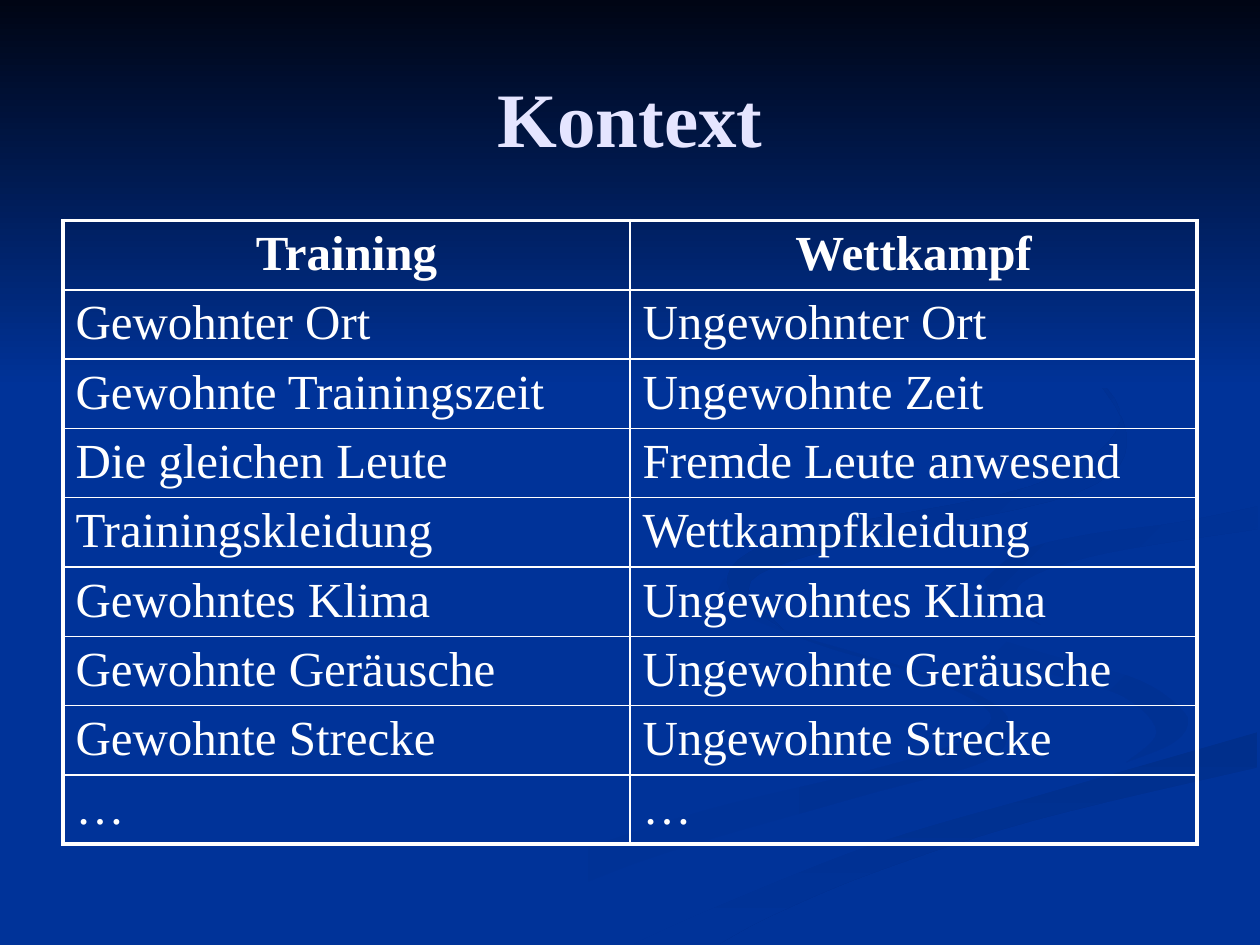
import dataclasses

import lxml.etree
import pptx
import pptx.dml.color
import pptx.enum.text
import pptx.oxml.ns
import pptx.util
from pptx.util import Inches

RGBColor = pptx.dml.color.RGBColor
PP_ALIGN = pptx.enum.text.PP_ALIGN
MSO_ANCHOR = pptx.enum.text.MSO_ANCHOR

NIGHT = RGBColor(0x00, 0x05, 0x14)
BLUE = RGBColor(0x00, 0x33, 0x99)
BLUE_SOFT = RGBColor(0x00, 0x31, 0x93)
BLUE_MID = RGBColor(0x00, 0x30, 0x91)
BLUE_DEEP = RGBColor(0x00, 0x2F, 0x8C)
LAVENDER = RGBColor(0xE5, 0xE5, 0xFF)
WHITE = RGBColor(0xFF, 0xFF, 0xFF)

SLIDE_WIDTH, SLIDE_HEIGHT = 10, 7.5
SKY_HEIGHT = 3.08
MARGIN = 0.5
CONTENT_WIDTH = SLIDE_WIDTH - 2 * MARGIN
ROW_HEIGHT = 0.55

# Edges that neighbouring ribbons share, as the few knots of a smooth curve.
BEND = [(7.25, 4.64), (7.45, 4.9), (8.31, 5.19), (9.05, 5.4), (9.43, 5.7)]
SWEEP = [(5.03, 7.49), (5.7, 7.19), (6.96, 6.69), (8.32, 6.29), (9.98, 5.81)]
HOOK = [(7.81, 4.6), (8.11, 4.37), (8.65, 4.24), (9.33, 4.15), (9.98, 4.02)]


@dataclasses.dataclass
class Ribbon:
    """A closed band: its edges follow one another around the outline."""
    edges: list
    start: RGBColor
    end: RGBColor
    angle: int


LEFT_CURL = Ribbon([
    [(5.75, 4.59), (6.14, 4.96), (6.82, 5.19), (7.45, 5.38), (7.92, 5.61),
     (8, 5.81), (7.8, 6.05), (6.76, 6.34), (4.99, 6.87), (3.61, 7.49)],
    [(3, 7.49), (3.76, 7.07), (5.39, 6.49), (6.84, 6.13), (7.59, 5.9),
     (7.86, 5.66), (7.28, 5.35), (6.54, 5.13), (5.81, 4.84), (5.7, 4.68)],
], BLUE, BLUE_SOFT, 0)
RIGHT_CURL = Ribbon([
    BEND + [(9.32, 5.89), (8.94, 6.05)],
    [(8.94, 6.05), (9.18, 5.81), (8.92, 5.53), (8.38, 5.36), (7.66, 5.12),
     (7.24, 4.64)],
], BLUE, BLUE_SOFT, 45)
LOWER_BAND = Ribbon([
    SWEEP,
    [(9.98, 6.09), (8.21, 6.51), (6.95, 6.92), (6.14, 7.26), (5.71, 7.49)],
], BLUE_DEEP, BLUE, 90)
MAIN_BAND = Ribbon([
    BEND + [(9.11, 6), (7.8, 6.34), (6.19, 6.84), (4.77, 7.49)],
    SWEEP,
    [(9.99, 5.38), (9.04, 5.19), (8.32, 4.98), (7.81, 4.6)],
    HOOK,
    [(9.99, 3.87), (9.2, 4.01), (8.3, 4.15), (7.55, 4.32), (7.25, 4.64)],
], BLUE, BLUE, 0)
UPPER_BAND = Ribbon([
    HOOK,
    [(9.98, 4.2), (8.78, 4.39), (8.16, 4.59), (8.06, 4.8), (8.26, 4.96)],
    [(8.26, 4.96), (7.91, 4.78), (7.81, 4.6)],
], BLUE_MID, BLUE, 45)
TOP_CURL = Ribbon([
    [(7.62, 2.33), (8.43, 2.75), (8.94, 3.44), (8.55, 3.91), (6.83, 4.3),
     (5.96, 4.61), (6.22, 5)],
    [(6.22, 5), (5.77, 4.62), (6.25, 4.26), (8.18, 3.86), (8.89, 3.35),
     (8.46, 2.79), (7.62, 2.33)],
], BLUE_DEEP, BLUE, 45)
SKY = Ribbon([
    [(0, 0), (SLIDE_WIDTH, 0)],
    [(SLIDE_WIDTH, SKY_HEIGHT), (0, SKY_HEIGHT)],
], NIGHT, BLUE, 90)
BACKDROP = [LEFT_CURL, RIGHT_CURL, LOWER_BAND, MAIN_BAND, UPPER_BAND,
            TOP_CURL, SKY]

COMPARISON = [
    ("Training", "Wettkampf"),
    ("Gewohnter Ort", "Ungewohnter Ort"),
    ("Gewohnte Trainingszeit", "Ungewohnte Zeit"),
    ("Die gleichen Leute", "Fremde Leute anwesend"),
    ("Trainingskleidung", "Wettkampfkleidung"),
    ("Gewohntes Klima", "Ungewohntes Klima"),
    ("Gewohnte Geräusche", "Ungewohnte Geräusche"),
    ("Gewohnte Strecke", "Ungewohnte Strecke"),
    ("…", "…")]


def smooth_curve(knots, steps=6):
    """Return points on the Catmull-Rom spline that runs through the knots."""
    padded = [knots[0], *knots, knots[-1]]
    points = [knots[0]]
    for before, start, end, after in zip(padded, padded[1:], padded[2:], padded[3:]):
        for step in range(1, steps + 1):
            t = step / steps
            points.append(tuple(
                b + t * ((c - a) + t * ((2 * a - 5 * b + 4 * c - d)
                                        + t * (3 * b - a - 3 * c + d))) / 2
                for a, b, c, d in zip(before, start, end, after)))
    return points


def write_text(text_frame, text, size=28, color=WHITE, bold=False,
               align=PP_ALIGN.LEFT, font="Times New Roman"):
    paragraph = text_frame.paragraphs[0]
    paragraph.alignment = align
    run = paragraph.add_run()
    run.text = text
    run.font.name = font
    run.font.size = pptx.util.Pt(size)
    run.font.bold = bold
    run.font.color.rgb = color


def set_borders(cell, widths):
    """Draw white borders; widths maps L, R, T and B to points."""
    properties = cell._tc.get_or_add_tcPr()
    for position, side in enumerate("LRTB"):
        line = lxml.etree.Element(pptx.oxml.ns.qn(f"a:ln{side}"),
                                  w=str(pptx.util.Pt(widths[side])))
        fill = lxml.etree.SubElement(line, pptx.oxml.ns.qn("a:solidFill"))
        lxml.etree.SubElement(fill, pptx.oxml.ns.qn("a:srgbClr"), val=str(WHITE))
        properties.insert(position, line)


class SlideBuilder:
    outer_border = 2.25
    inner_border = 1

    def __init__(self, slide):
        self.slide = slide

    def background(self, color):
        fill = self.slide.background.fill
        fill.solid()
        fill.fore_color.rgb = color

    def ribbon(self, ribbon):
        points = [(Inches(x), Inches(y))
                  for edge in ribbon.edges for x, y in smooth_curve(edge)]
        outline = self.slide.shapes.build_freeform(*points[0])
        outline.add_line_segments(points[1:], close=True)
        shape = outline.convert_to_shape()
        shape.shadow.inherit = False
        shape.line.fill.background()
        shape.fill.gradient()
        # python-pptx counts the angle counter-clockwise.
        shape.fill.gradient_angle = -ribbon.angle % 360
        for stop, color in zip(shape.fill.gradient_stops,
                               (ribbon.start, ribbon.end)):
            stop.color.rgb = color

    def title(self, text, left, top, width, height):
        shape = self.slide.shapes.add_textbox(
            Inches(left), Inches(top), Inches(width), Inches(height))
        text_frame = shape.text_frame
        text_frame.word_wrap = True
        text_frame.vertical_anchor = MSO_ANCHOR.MIDDLE
        write_text(text_frame, text, size=44, color=LAVENDER, bold=True,
                   align=PP_ALIGN.CENTER)

    def table(self, rows, left, top, width, row_height):
        last_row, last_column = len(rows) - 1, len(rows[0]) - 1
        table = self.slide.shapes.add_table(
            len(rows), len(rows[0]), Inches(left), Inches(top),
            Inches(width), Inches(row_height * len(rows))).table
        table.horz_banding = False
        for i, row in enumerate(rows):
            header = i == 0
            for j, text in enumerate(row):
                cell = table.cell(i, j)
                cell.fill.background()
                cell.margin_bottom = Inches(0.02)
                write_text(cell.text_frame, text, bold=header,
                           align=PP_ALIGN.CENTER if header else PP_ALIGN.LEFT)
                at_edge = {"L": j == 0, "R": j == last_column,
                           "T": i == 0, "B": i == last_row}
                set_borders(cell, {
                    side: self.outer_border if edge else self.inner_border
                    for side, edge in at_edge.items()})


def main():
    presentation = pptx.Presentation()
    presentation.slide_width = Inches(SLIDE_WIDTH)
    presentation.slide_height = Inches(SLIDE_HEIGHT)
    builder = SlideBuilder(
        presentation.slides.add_slide(presentation.slide_layouts[6]))
    builder.background(BLUE)
    for ribbon in BACKDROP:
        builder.ribbon(ribbon)
    builder.title("Kontext", MARGIN, 0.3, CONTENT_WIDTH, 1.25)
    builder.table(COMPARISON, MARGIN, 1.75, CONTENT_WIDTH, ROW_HEIGHT)
    presentation.save("out.pptx")


if __name__ == "__main__":
    main()
